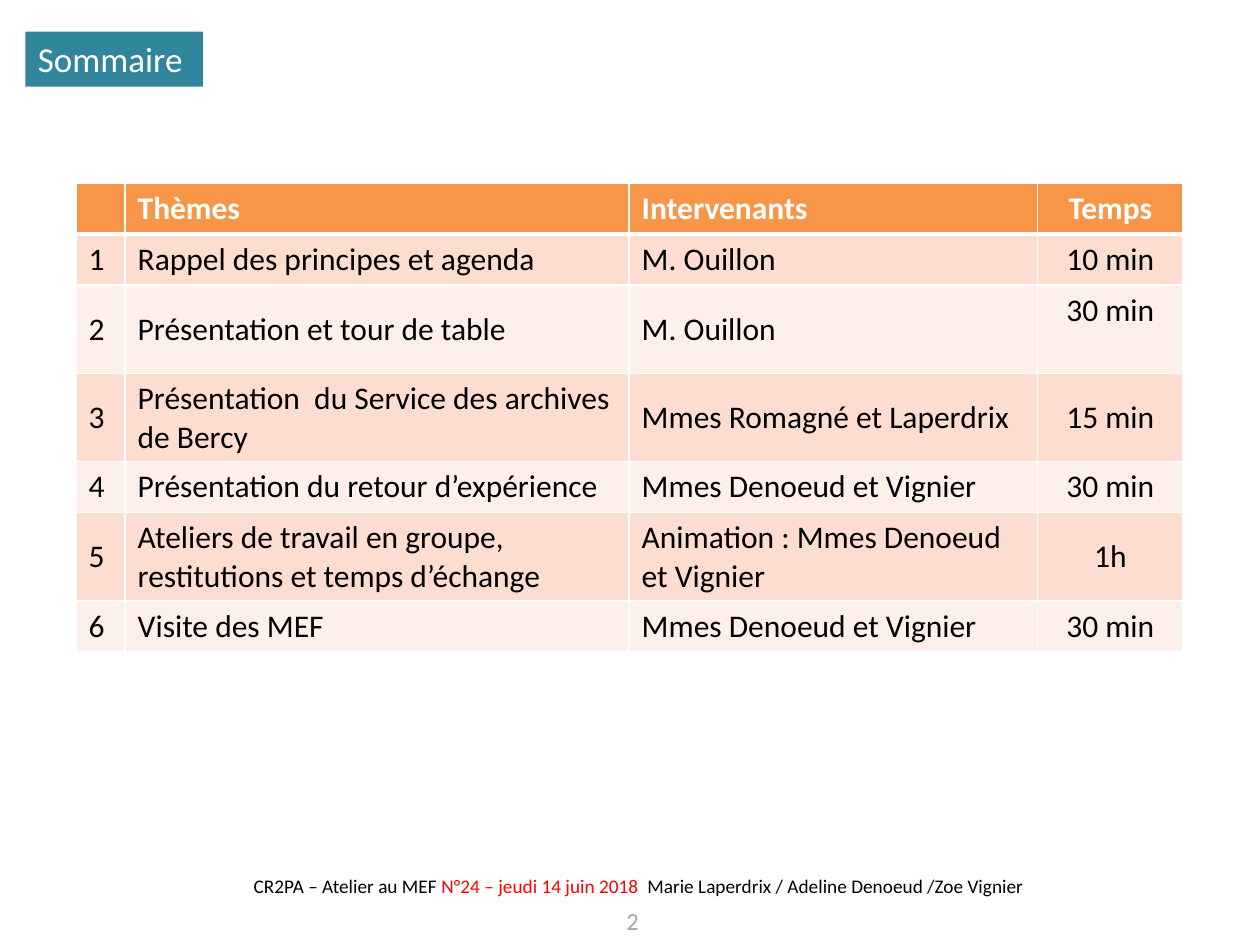
from typing import NamedTuple

from lxml.etree import SubElement
from pptx import Presentation
from pptx.dml.color import RGBColor
from pptx.enum.shapes import MSO_SHAPE as Shape
from pptx.enum.text import MSO_ANCHOR as Anchor, PP_ALIGN as Align
from pptx.oxml.ns import qn
from pptx.util import Pt

FONT = "Calibri"
WHITE, BLACK, RED, GREY = "FFFFFF", "000000", "FF0000", "A6A6A6"
TEAL, ORANGE = "31859C", "F79646"
BANDS = ("FCDDCF", "FDEFE9")
COLUMN_WIDTHS = (28, 288, 233.5, 83)
SINGLE_LINE, DOUBLE_LINE = 29.2, 50.4


class Session(NamedTuple):
    theme: str
    speakers: str
    duration: str
    height: float = SINGLE_LINE
    duration_anchor: Anchor = Anchor.MIDDLE


SESSIONS = (
    Session("Rappel des principes et agenda", "M. Ouillon", "10 min"),
    Session("Présentation et tour de table", "M. Ouillon", "30 min",
            DOUBLE_LINE, Anchor.TOP),
    Session("Présentation  du Service des archives de Bercy",
            "Mmes Romagné et Laperdrix", "15 min", DOUBLE_LINE),
    Session("Présentation du retour d’expérience", "Mmes Denoeud et Vignier", "30 min"),
    Session("Ateliers de travail en groupe, restitutions et temps d’échange",
            "Animation : Mmes Denoeud et Vignier", "1h", DOUBLE_LINE),
    Session("Visite des MEF", "Mmes Denoeud et Vignier", "30 min"),
)


def rgb(code: str) -> RGBColor:
    return RGBColor.from_string(code)


def style_font(font, size: float, color: str, bold: bool = False) -> None:
    font.name, font.size, font.bold = FONT, Pt(size), bold
    font.color.rgb = rgb(color)


def add_centred_text(slide, box: tuple, size: float, runs: tuple, wrap: bool = True) -> None:
    """Add one centred line made of (text, colour) runs."""
    frame = slide.shapes.add_textbox(*map(Pt, box)).text_frame
    frame.word_wrap = wrap
    line = frame.paragraphs[0]
    line.alignment = Align.CENTER
    for text, color in runs:
        run = line.add_run()
        run.text = text
        style_font(run.font, size, color)


def add_heading(slide, text: str) -> None:
    banner = slide.shapes.add_shape(Shape.RECTANGLE, Pt(14.5), Pt(18), Pt(101.5), Pt(31.5))
    banner.shadow.inherit = False
    banner.fill.solid()
    banner.fill.fore_color.rgb = rgb(TEAL)
    banner.line.fill.background()
    frame = banner.text_frame
    frame.word_wrap = True
    frame.vertical_anchor = Anchor.TOP
    frame.text = text
    frame.paragraphs[0].alignment = Align.LEFT
    style_font(frame.paragraphs[0].runs[0].font, 20, WHITE)


def set_borders(cell, top: float, bottom: float) -> None:
    """Give the cell white borders, 1 pt wide at the sides."""
    properties = cell._tc.get_or_add_tcPr()
    for side, width in (("L", 1), ("R", 1), ("T", top), ("B", bottom)):
        line = SubElement(properties, qn(f"a:ln{side}"), w=str(Pt(width)))
        SubElement(SubElement(line, qn("a:solidFill")), qn("a:srgbClr"), val=WHITE)


def fill_row(table, row: int, texts: tuple, fill: str, color: str,
             last_anchor: Anchor = Anchor.MIDDLE) -> None:
    last = len(texts) - 1
    for column, text in enumerate(texts):
        cell = table.cell(row, column)
        set_borders(cell, top=3 if row == 1 else 1, bottom=3 if row == 0 else 1)
        cell.fill.solid()
        cell.fill.fore_color.rgb = rgb(fill)
        cell.vertical_anchor = last_anchor if column == last else Anchor.MIDDLE
        cell.text = text
        paragraph = cell.text_frame.paragraphs[0]
        paragraph.alignment = Align.CENTER if column == last else Align.LEFT
        for run in paragraph.runs:
            style_font(run.font, 18, color, bold=row == 0)


def add_agenda(slide) -> None:
    heights = [SINGLE_LINE] + [session.height for session in SESSIONS]
    table = slide.shapes.add_table(
        len(heights), len(COLUMN_WIDTHS), Pt(43.5), Pt(104.5),
        Pt(sum(COLUMN_WIDTHS)), Pt(sum(heights))).table
    for column, width in zip(table.columns, COLUMN_WIDTHS):
        column.width = Pt(width)
    for row, height in zip(table.rows, heights):
        row.height = Pt(height)
    fill_row(table, 0, ("", "Thèmes", "Intervenants", "Temps"), ORANGE, WHITE)
    for number, session in enumerate(SESSIONS, start=1):
        texts = (str(number), session.theme, session.speakers, session.duration)
        fill_row(table, number, texts, BANDS[(number - 1) % 2], BLACK,
                 session.duration_anchor)


def main() -> None:
    deck = Presentation()
    deck.slide_width, deck.slide_height = Pt(720), Pt(540)
    slide = deck.slides.add_slide(deck.slide_layouts[6])
    add_centred_text(slide, (88, 496, 556.5, 18), 11, (
        ("CR2PA – Atelier au MEF ", BLACK),
        ("N°24 – jeudi 14 juin 2018  ", RED),
        ("Marie Laperdrix / Adeline Denoeud /Zoe Vignier ", BLACK)))
    add_centred_text(slide, (342.5, 514, 38, 24.5), 14, (("2", GREY),), wrap=False)
    add_heading(slide, "Sommaire")
    add_agenda(slide)
    deck.save("out.pptx")


if __name__ == "__main__":
    main()
